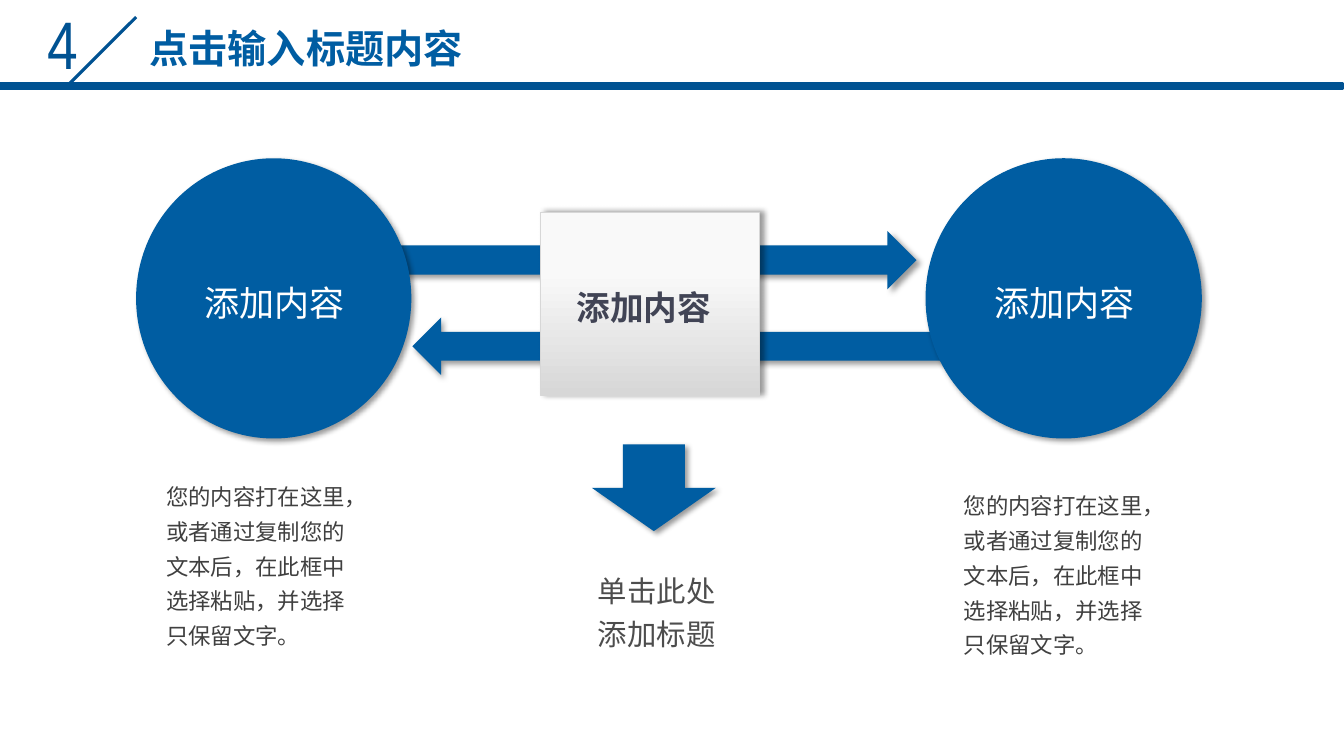
"""Build a slide of two circles exchanging arrows through a central box."""
from dataclasses import dataclass

from lxml import etree
from pptx import Presentation
from pptx.dml.color import RGBColor
from pptx.enum.shapes import MSO_CONNECTOR, MSO_SHAPE
from pptx.enum.text import MSO_ANCHOR, PP_ALIGN
from pptx.oxml.ns import qn
from pptx.util import Pt

RECTANGLE, ELLIPSE = MSO_SHAPE.RECTANGLE, MSO_SHAPE.OVAL
RIGHT_ARROW, LEFT_ARROW = MSO_SHAPE.RIGHT_ARROW, MSO_SHAPE.LEFT_ARROW
DOWN_ARROW = MSO_SHAPE.DOWN_ARROW
STRAIGHT = MSO_CONNECTOR.STRAIGHT
TOP, MIDDLE = MSO_ANCHOR.TOP, MSO_ANCHOR.MIDDLE
LEFT, CENTER = PP_ALIGN.LEFT, PP_ALIGN.CENTER


@dataclass(frozen=True)
class Theme:
    blue: str = "005DA2"
    navy: str = "005292"
    white: str = "FFFFFF"
    slate: str = "414455"
    body: str = "404040"
    caption: str = "4D4D4D"
    pale: str = "F9F9F9"
    grey: str = "D7D7D7"
    font: str = "Noto Sans CJK SC"
    number_font: str = "Arial Narrow"
    number_size: int = 48
    title_size: int = 28
    circle_size: int = 25
    center_size: int = 24
    caption_size: int = 21
    body_size: int = 16


THEME = Theme()
EMU_PER_PX = 9144
PAGE_SIZE = (1333, 750)

NUMBER = ("4", (37, -3, 60, 91))
TITLE = ("点击输入标题内容", (124, 19, 359, 57))
SLASH = (135, 17, 68, 84)
HEADER_BAR = (0, 83, 1332, 5)
FLOW_ARROWS = [(RIGHT_ARROW, (390, 229, 519, 58)), (LEFT_ARROW, (409, 315, 537, 57))]
CIRCLES = [("添加内容", (135, 157, 273, 278)), ("添加内容", (918, 157, 274, 278))]
CENTER_BOX = ("添加内容", (536, 210, 217, 182))
RESULT_ARROW = (587, 441, 123, 86)
BODY = "您的内容打在这里，或者通过复制您的文本后，在此框中选择粘贴，并选择只保留文字。"
BODY_FRAMES = [(151, 464, 226, 193), (942, 473, 226, 193)]
CAPTION = ("单击此处添加标题", (579, 555, 172, 99))
WIDE_INSETS = (14, 7, 14, 7)


def px(*lengths):
    return [length * EMU_PER_PX for length in lengths]


def color(code):
    return RGBColor.from_string(code)


def write(box, text, *, size, ink, font=THEME.font, bold=False, align=LEFT,
          anchor=TOP, spacing=1.0, insets=(10, 5, 10, 5)):
    frame = box.text_frame
    frame.word_wrap = True
    frame.vertical_anchor = anchor
    (frame.margin_left, frame.margin_top,
     frame.margin_right, frame.margin_bottom) = px(*insets)
    para = frame.paragraphs[0]
    para.alignment = align
    para.line_spacing = spacing
    span = para.add_run()
    span.text = text
    span.font.size = Pt(size)
    span.font.bold = bold
    span.font.color.rgb = color(ink)
    span.font.name = font
    etree.SubElement(span.font._element, qn("a:ea"), typeface=font)


def add_text(page, text, place, **style):
    write(page.shapes.add_textbox(*px(*place)), text, **style)


def add_block(page, kind, place, fill=THEME.blue):
    block = page.shapes.add_shape(kind, *px(*place))
    block.shadow.inherit = False
    block.fill.solid()
    block.fill.fore_color.rgb = color(fill)
    block.line.fill.background()
    return block


def outline(line, ink, width):
    line.color.rgb = color(ink)
    line.width = Pt(width)


def cast_shadow(block, angle=45):
    effects = block._element.spPr.find(qn("a:effectLst"))
    shadow = etree.SubElement(
        effects, qn("a:outerShdw"), blurRad=str(Pt(4)), dist=str(Pt(3)),
        dir=str(angle * 60000), algn="tl", rotWithShape="0")
    tint = etree.SubElement(shadow, qn("a:srgbClr"), val="000000")
    etree.SubElement(tint, qn("a:alpha"), val="40000")


def draw_header(page):
    text, place = NUMBER
    add_text(page, text, place, size=THEME.number_size, ink=THEME.navy,
             font=THEME.number_font)
    slash = page.shapes.add_connector(STRAIGHT, *px(*SLASH))
    outline(slash.line, THEME.navy, 2.25)
    etree.SubElement(slash._element.spPr, qn("a:effectLst"))
    bar = add_block(page, RECTANGLE, HEADER_BAR, THEME.navy)
    outline(bar.line, THEME.navy, 2)
    text, place = TITLE
    add_text(page, text, place, size=THEME.title_size, ink=THEME.blue,
             bold=True, align=CENTER)


def draw_center_box(page):
    text, place = CENTER_BOX
    box = add_block(page, RECTANGLE, place)
    box.fill.gradient()
    box.fill.gradient_angle = 270
    stops = [(0.33, THEME.pale), (1.0, THEME.grey)]
    for stop, (position, tone) in zip(box.fill.gradient_stops, stops):
        stop.position = position
        stop.color.rgb = color(tone)
    outline(box.line, THEME.grey, 0.25)
    cast_shadow(box, angle=0)
    write(box, text, size=THEME.center_size, ink=THEME.slate, bold=True,
          anchor=MIDDLE, spacing=1.2, insets=(36, 7, 14, 7))


def draw_diagram(page):
    for kind, place in FLOW_ARROWS:
        cast_shadow(add_block(page, kind, place))
    for text, place in CIRCLES:
        circle = add_block(page, ELLIPSE, place)
        cast_shadow(circle)
        write(circle, text, size=THEME.circle_size, ink=THEME.white,
              anchor=MIDDLE, spacing=1.2, insets=(28, 7, 14, 7))
    draw_center_box(page)
    cast_shadow(add_block(page, DOWN_ARROW, RESULT_ARROW))


def draw_notes(page):
    for place in BODY_FRAMES:
        add_text(page, BODY, place, size=THEME.body_size, ink=THEME.body,
                 spacing=1.3, insets=WIDE_INSETS)
    text, place = CAPTION
    add_text(page, text, place, size=THEME.caption_size, ink=THEME.caption,
             spacing=1.2, insets=WIDE_INSETS)


def main():
    deck = Presentation()
    deck.slide_width, deck.slide_height = px(*PAGE_SIZE)
    page = deck.slides.add_slide(deck.slide_layouts[6])
    draw_header(page)
    draw_diagram(page)
    draw_notes(page)
    deck.save("out.pptx")


if __name__ == "__main__":
    main()
